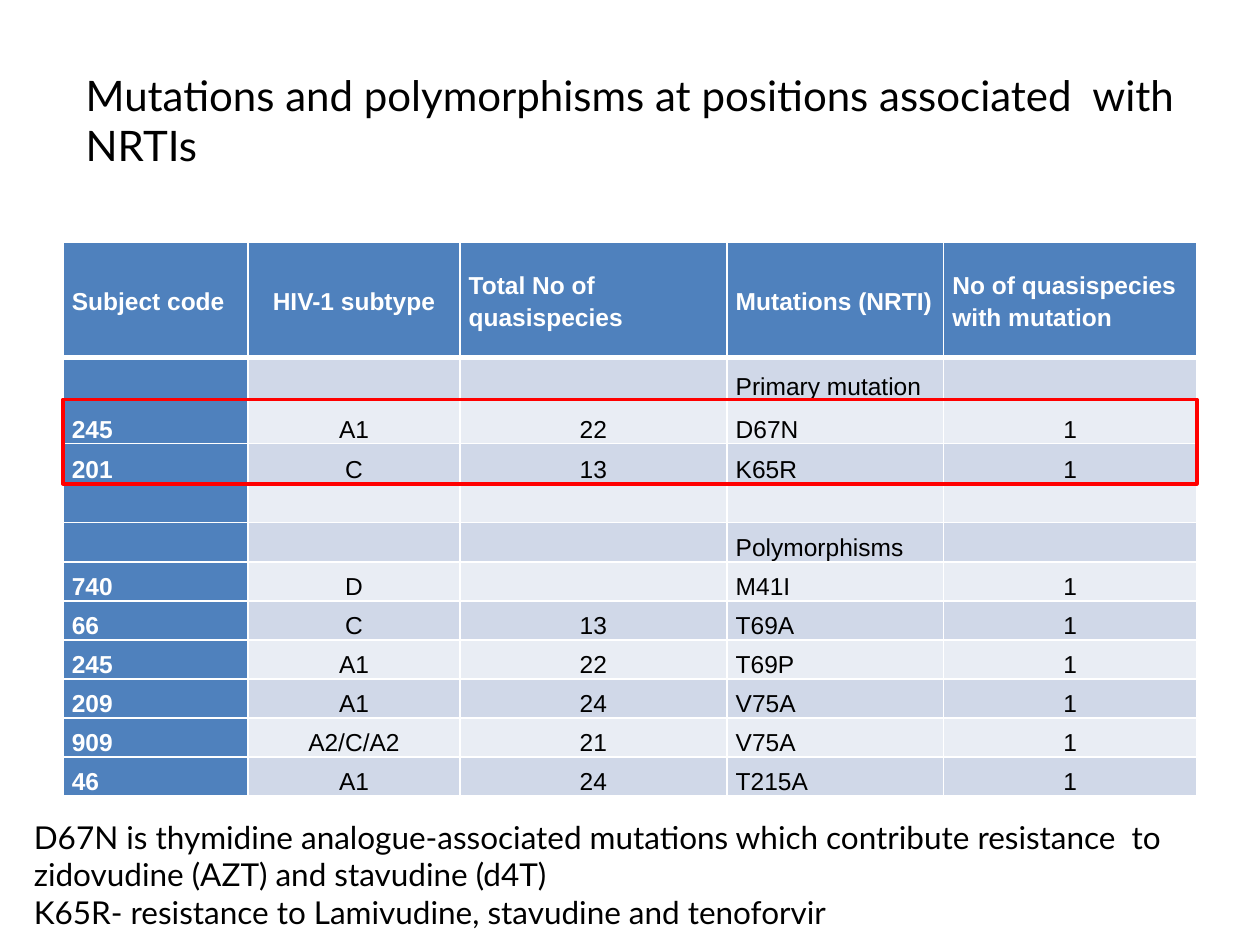
import dataclasses
import typing

import lxml.etree
import pptx
import pptx.dml.color
import pptx.enum.shapes
import pptx.enum.text
import pptx.oxml.ns
import pptx.util

WIDE, HIGH = pptx.util.Inches(10), pptx.util.Inches(7.5)
COLS, ROWS = 100, 75
ALIGN = pptx.enum.text.PP_ALIGN
ANCHOR = pptx.enum.text.MSO_ANCHOR
COLOR = {
    "head": "4F81BD",
    "dark": "D0D8E8",
    "light": "E9EDF4",
    "white": "FFFFFF",
    "black": "000000",
    "mark": "FF0000",
}
WIDTHS = [14.7, 16.8, 21.2, 17.2, 20.1]
HEIGHTS = [9.2, 3.4, 3.4, 3.2] + [3.1] * 8
CENTRED = [(1, 2, 4) if row else (1,) for row in range(len(HEIGHTS))]
DATA = [
    ["Subject code", "HIV-1 subtype", "Total No of quasispecies",
     "Mutations (NRTI)", "No of quasispecies  with mutation"],
    ["", "", "", "Primary mutation", ""],
    ["245", "A1", "22", "D67N", "1"],
    ["201", "C", "13", "K65R", "1"],
    ["", "", "", "", ""],
    ["", "", "", "Polymorphisms", ""],
    ["740", "D", "", "M41I", "1"],
    ["66", "C", "13", "T69A", "1"],
    ["245", "A1", "22", "T69P", "1"],
    ["209", "A1", "24", "V75A", "1"],
    ["909", "A2/C/A2", "21", "V75A", "1"],
    ["46", "A1", "24", "T215A", "1"],
]
TITLE = ["Mutations and polymorphisms at positions associated  with NRTIs"]
NOTES = [
    "D67N is thymidine analogue-associated mutations which contribute "
    "resistance  to zidovudine (AZT) and stavudine (d4T)",
    "K65R- resistance to Lamivudine, stavudine and tenoforvir",
]


@dataclasses.dataclass
class Box:
    col: float
    row: float
    wide: float
    high: float

    def place(self) -> tuple[int, int, int, int]:
        return across(self.col), down(self.row), across(self.wide), down(self.high)


@dataclasses.dataclass
class Style:
    font: str
    size: float
    color: str = "black"
    bold: bool = False


def across(count: float) -> int:
    return round(WIDE * count / COLS)


def down(count: float) -> int:
    return round(HIGH * count / ROWS)


def tint(name: str) -> pptx.dml.color.RGBColor:
    return pptx.dml.color.RGBColor.from_string(COLOR[name])


def apply(item: typing.Any, values: dict) -> None:
    for key, value in values.items():
        setattr(item, key, value)


def write(para: typing.Any, text: str, style: Style) -> None:
    size = pptx.util.Pt(style.size)
    if not text:
        tag = pptx.oxml.ns.qn("a:endParaRPr")
        lxml.etree.SubElement(para._p, tag, sz=str(size.centipoints))
        return
    run = para.add_run()
    run.text = text
    apply(run.font, {"name": style.font, "size": size, "bold": style.bold})
    run.font.color.rgb = tint(style.color)


def fill_text(shape: typing.Any, box: Box, lines: list[str], style: Style) -> None:
    apply(shape, dict(zip(("left", "top", "width", "height"), box.place())))
    frame = shape.text_frame
    apply(frame, {
        "word_wrap": True,
        "vertical_anchor": ANCHOR.TOP,
        "auto_size": pptx.enum.text.MSO_AUTO_SIZE.NONE,
    })
    for index, line in enumerate(lines):
        para = frame.add_paragraph() if index else frame.paragraphs[0]
        para.alignment = ALIGN.LEFT
        write(para, line, style)


def edge(cell: typing.Any, side: str, points: float) -> None:
    name = pptx.oxml.ns.qn
    line = lxml.etree.SubElement(cell._tc.get_or_add_tcPr(), name("a:ln" + side),
                                 w=str(pptx.util.Pt(points)))
    solid = lxml.etree.SubElement(line, name("a:solidFill"))
    lxml.etree.SubElement(solid, name("a:srgbClr"), val=COLOR["white"])


def draw_cell(cell: typing.Any, row: int, col: int, text: str) -> None:
    inset = across(0.7)
    apply(cell, {
        "margin_left": inset, "margin_right": inset,
        "margin_top": 0, "margin_bottom": 0,
        "vertical_anchor": ANCHOR.BOTTOM if row else ANCHOR.MIDDLE,
    })
    for side in "LRTB":
        thick = (row == 0 and side == "B") or (row == 1 and side == "T")
        edge(cell, side, 3 if thick else 1)
    lead = row == 0 or col == 0
    cell.fill.solid()
    cell.fill.fore_color.rgb = tint("head" if lead else "dark" if row % 2 else "light")
    para = cell.text_frame.paragraphs[0]
    apply(para, {
        "line_spacing": 1.15,
        "alignment": ALIGN.CENTER if col in CENTRED[row] else ALIGN.LEFT,
    })
    write(para, text, Style("Arial", 14, "white" if lead else "black", lead))


def draw_table(slide: typing.Any, box: Box) -> None:
    table = slide.shapes.add_table(len(DATA), len(WIDTHS), *box.place()).table
    for column, wide in zip(table.columns, WIDTHS):
        column.width = across(wide)
    for line, high in zip(table.rows, HEIGHTS):
        line.height = down(high)
    for row, texts in enumerate(DATA):
        for col, text in enumerate(texts):
            draw_cell(table.cell(row, col), row, col, text)


def draw_frame(slide: typing.Any, box: Box) -> None:
    kind = pptx.enum.shapes.MSO_SHAPE.RECTANGLE
    frame = slide.shapes.add_shape(kind, *box.place())
    frame.shadow.inherit = False
    frame.fill.background()
    frame.line.color.rgb = tint("mark")
    frame.line.width = pptx.util.Pt(2)


def main() -> None:
    deck = pptx.Presentation()
    apply(deck, {"slide_width": WIDE, "slide_height": HIGH})
    slide = deck.slides.add_slide(deck.slide_layouts.get_by_name("Title Only"))
    draw_table(slide, Box(5, 19.2, sum(WIDTHS), sum(HEIGHTS)))
    fill_text(slide.shapes.title, Box(5.8, 5, 93.3, 9.1), TITLE, Style("Lato", 24))
    draw_frame(slide, Box(5, 31.7, sum(WIDTHS), 6.7))
    box = Box(1.7, 64.4, 95.8, 10.1)
    notes = slide.shapes.add_textbox(*box.place())
    fill_text(notes, box, NOTES, Style("Lato", 18))
    deck.save("out.pptx")


if __name__ == "__main__":
    main()
